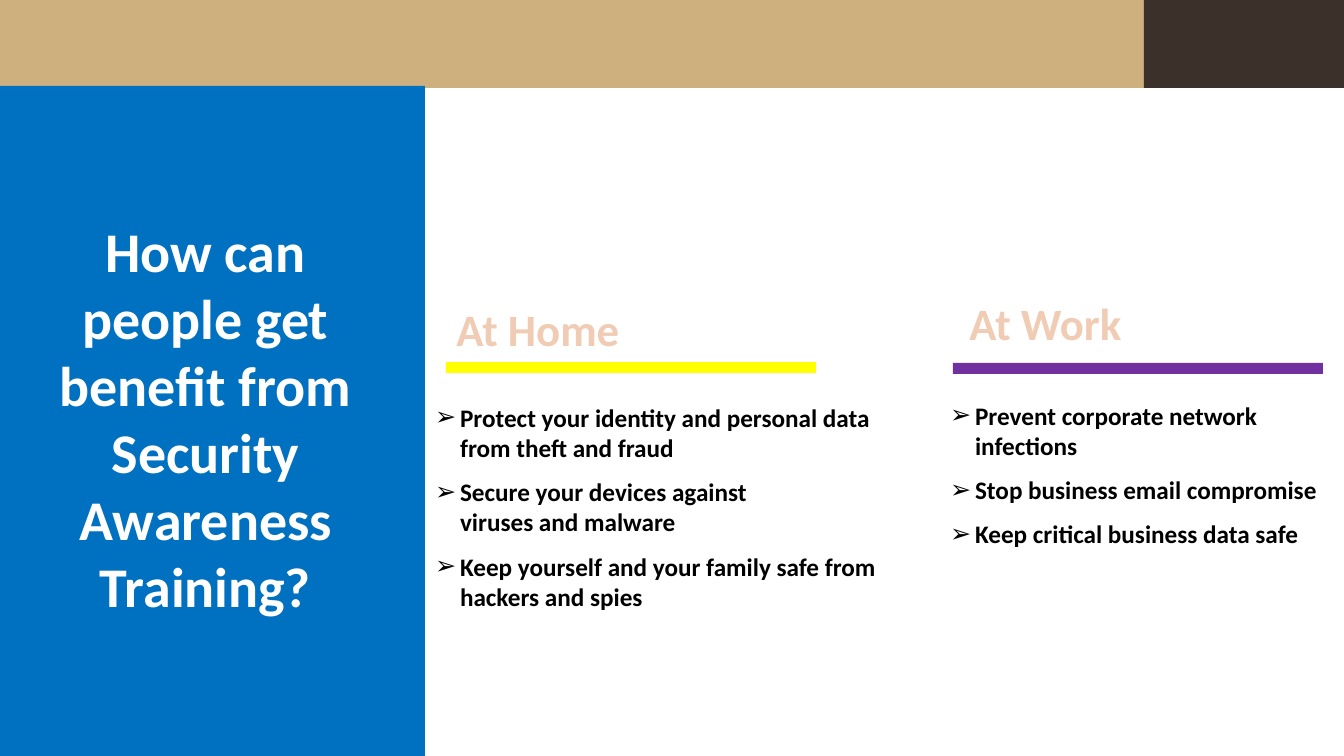
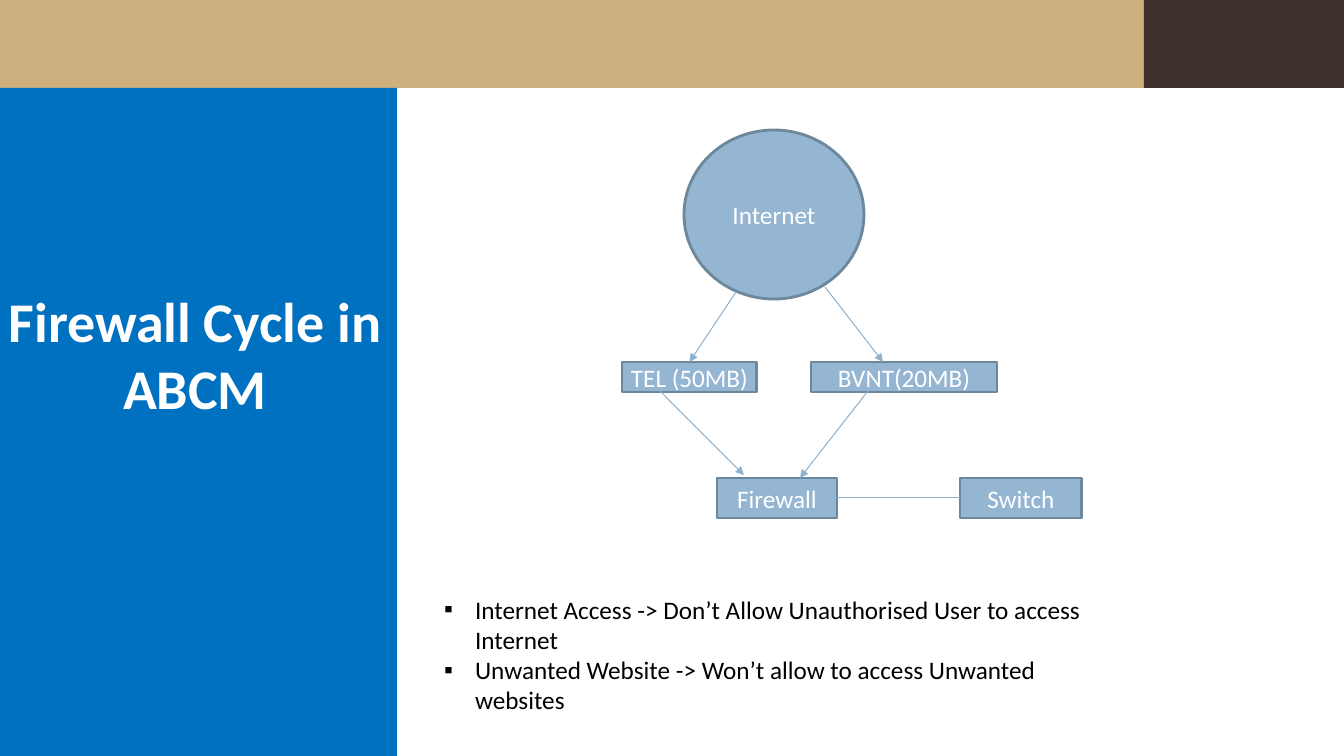
from lxml import etree
from pptx import Presentation, util as u
from pptx.dml.color import RGBColor
from pptx.enum import shapes, text
from pptx.oxml.ns import qn

PX = 9071.43  # EMU in one px, at 100.8 px to the inch
FONT = "Calibri"
TAN = RGBColor(0xCD, 0xB0, 0x7D)
BROWN = RGBColor(0x3C, 0x30, 0x2A)
BLUE = RGBColor(0x00, 0x70, 0xC0)
YELLOW = RGBColor(0xFF, 0xFF, 0x00)
PURPLE = RGBColor(0x70, 0x30, 0xA0)
PEACH = RGBColor(0xF1, 0xCC, 0xB5)
NODE_FILL = RGBColor(0x94, 0xB6, 0xD2)
NODE_LINE = RGBColor(0x6D, 0x87, 0x9B)
ARROW = RGBColor(0x8F, 0xB2, 0xCF)
WHITE = RGBColor(0xFF, 0xFF, 0xFF)
BLACK = RGBColor(0, 0, 0)
RECT = shapes.MSO_SHAPE.RECTANGLE
OVAL = shapes.MSO_SHAPE.OVAL


def add_box(slide, at, fill, line=None, kind=RECT):
    box = slide.shapes.add_shape(kind, *[u.Emu(round(n * PX)) for n in at])
    box.shadow.inherit = False
    box.fill.solid()
    box.fill.fore_color.rgb = fill
    if line is None:
        box.line.fill.background()
    else:
        box.line.color.rgb = line
        box.line.width = u.Pt(2)
    return box


def write(shape, *lines, at=None, size=18, color=BLACK, bold=False, wrap=True, bullet=None,
          indent=0, after=0, align=text.PP_ALIGN.LEFT, anchor=text.MSO_ANCHOR.TOP):
    """Fill a shape with one paragraph per line, moving it to `at` if given."""
    if at:
        shape.left, shape.top, shape.width, shape.height = [u.Emu(round(n * PX)) for n in at]
    frame = shape.text_frame
    frame.auto_size = text.MSO_AUTO_SIZE.NONE
    frame.word_wrap = wrap
    frame.vertical_anchor = anchor
    for number, line in enumerate(lines):
        paragraph = frame.add_paragraph() if number else frame.paragraphs[0]
        paragraph.text = line
        paragraph.alignment = align
        paragraph.space_before = u.Pt(0)
        paragraph.space_after = u.Pt(after)
        if bullet:
            props = paragraph._p.get_or_add_pPr()
            props.set("marL", str(round(indent * PX)))
            props.set("indent", str(round(-indent * PX)))
            etree.SubElement(props, qn("a:buFont")).set("typeface", "Arial")
            etree.SubElement(props, qn("a:buChar")).set("char", bullet)
        font = paragraph.font
        font.name, font.size, font.bold = FONT, u.Pt(size), bold
        font.color.rgb = color


prs = Presentation()
prs.slide_width, prs.slide_height = u.Emu(round(1344 * PX)), u.Emu(round(756 * PX))
benefits = prs.slides.add_slide(prs.slide_layouts.get_by_name("Comparison"))
firewall_cycle = prs.slides.add_slide(prs.slide_layouts.get_by_name("Title and Content"))

# Top bands belong to the master, behind everything
for at, fill in [((1144, 0, 200, 88), BROWN), ((0, 0, 1224, 88), TAN)]:
    band = add_box(benefits, at, fill)
    prs.slide_master.shapes.element.insert(2, band.element)

# Blue panel with the title
for slide, panel_at, title_at, title in [
    (benefits, (0, 86, 425, 670), (34, 211, 343, 417),
     "How can people get benefit from Security Awareness Training?"),
    (firewall_cycle, (0, 88, 397, 668), (-4, 281, 398, 146), "Firewall Cycle in ABCM"),
]:
    panel = add_box(slide, panel_at, BLUE)
    slide.shapes.element.insert(2, panel.element)
    write(slide.shapes.title, title, at=title_at, size=40, color=WHITE, bold=True,
          align=text.PP_ALIGN.CENTER)

# Benefits at home and at work
for first, heading, heading_at, rule_at, rule_color, list_at, points in [
    (1, "At Home", (446, 297, 184, 65), (446, 362, 370, 11), YELLOW, (425, 397, 499, 239),
     ["Protect your identity and personal data from theft and fraud",
      "Secure your devices against\nviruses and malware",
      "Keep yourself and your family safe from hackers and spies"]),
    (3, "At Work", (959, 291, 173, 65), (953, 363, 370, 11), PURPLE, (940, 395, 403, 193),
     ["Prevent corporate network infections",
      "Stop business email compromise",
      "Keep critical business data safe"]),
]:
    write(benefits.placeholders[first], heading, at=heading_at, size=32, color=PEACH,
          bold=True, wrap=False, align=text.PP_ALIGN.CENTER)
    add_box(benefits, rule_at, rule_color)
    write(benefits.placeholders[first + 1], *points, at=list_at, bold=True,
          bullet="➢", indent=25, after=10)

# Firewall diagram
nodes = {}
for label, at, kind in [
    ("Internet", (684, 130, 180, 169), OVAL),
    ("TEL (50MB)", (622, 362, 135, 30), RECT),
    ("BVNT(20MB)", (811, 362, 186, 30), RECT),
    ("Firewall", (717, 478, 120, 40), RECT),
    ("Switch", (960, 478, 122, 40), RECT),
]:
    nodes[label] = add_box(firewall_cycle, at, NODE_FILL, NODE_LINE, kind)
    write(nodes[label], label, color=WHITE, wrap=False,
          align=text.PP_ALIGN.CENTER, anchor=text.MSO_ANCHOR.MIDDLE)

for ends, begin_at, end_at, arrow in [
    ((736, 292, 689, 362), None, ("TEL (50MB)", 0), True),
    ((825, 287, 883, 362), None, None, True),
    ((660, 391, 744, 475), None, None, True),
    ((868, 391, 800, 478), None, None, True),
    ((837, 498, 960, 498), ("Firewall", 3), ("Switch", 1), False),
]:
    link = firewall_cycle.shapes.add_connector(
        shapes.MSO_CONNECTOR.STRAIGHT, *[u.Emu(round(n * PX)) for n in ends])
    if begin_at:
        link.begin_connect(nodes[begin_at[0]], begin_at[1])
    if end_at:
        link.end_connect(nodes[end_at[0]], end_at[1])
    link.line.color.rgb = ARROW
    link.line.width = u.Pt(0.75)
    if arrow:
        etree.SubElement(link.line._get_or_add_ln(), qn("a:tailEnd")).set("type", "triangle")
    etree.SubElement(link.element.spPr, qn("a:effectLst"))

write(firewall_cycle.placeholders[1],
      "Internet Access -> Don’t Allow Unauthorised User to access Internet",
      "Unwanted Website -> Won’t allow to access Unwanted websites",
      at=(434, 589, 684, 132), bullet="▪", indent=31)

prs.save("out.pptx")
